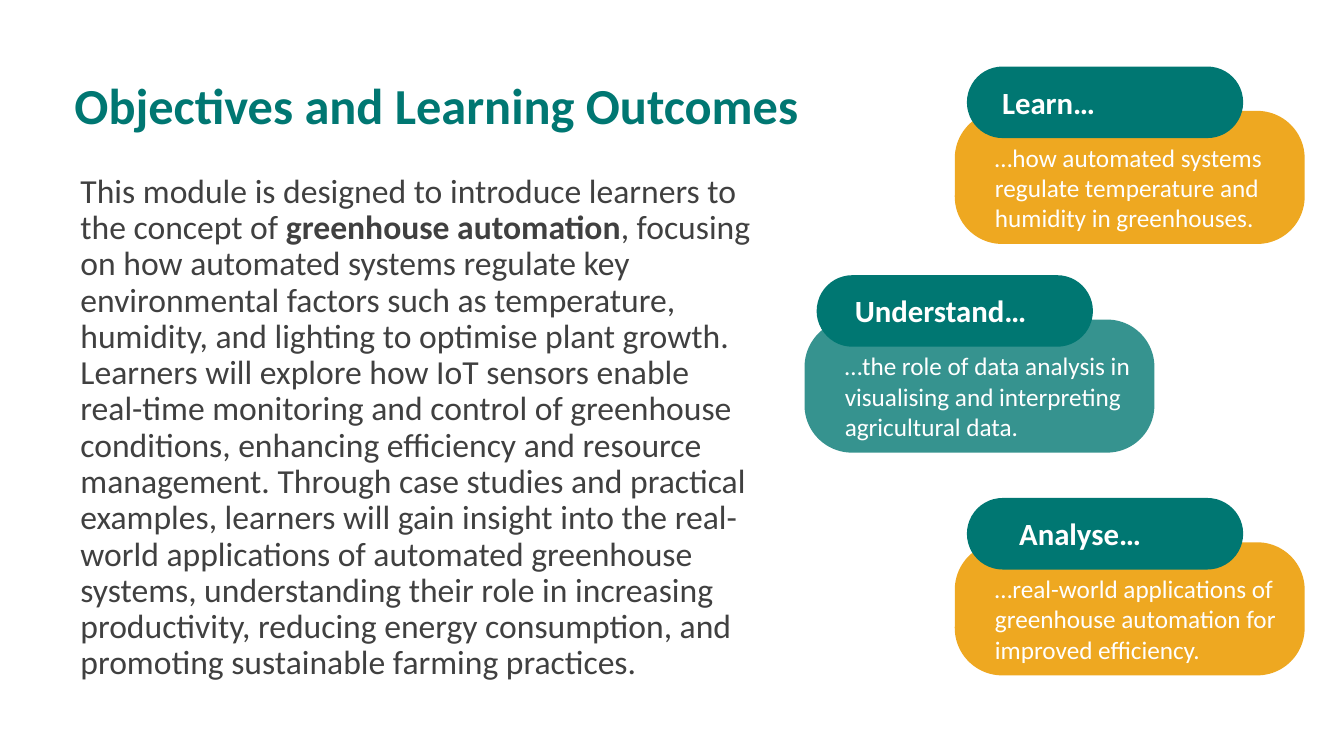
from dataclasses import dataclass

from lxml import etree
from pptx import Presentation
from pptx import util as u
from pptx.dml.color import RGBColor
from pptx.enum import shapes, text
from pptx.oxml.ns import qn

PX = 9144  # EMU per px, 100 px to the inch


@dataclass(frozen=True)
class Theme:
    font: str = "Calibri"
    teal: str = "007772"
    amber: str = "EEA821"
    white: str = "FFFFFF"
    ink: str = "404040"
    title: int = 36
    intro: int = 24
    label: int = 22
    detail: int = 18


class Deck:
    CARD_W, CARD_H, CARD_RADIUS = 347, 132, 47
    TAB_W, TAB_H = 274, 71
    TAB_DX, TAB_DY = 12, -44

    def __init__(self, theme):
        self.theme = theme
        self.prs = Presentation()
        self.prs.slide_width = 1333 * PX
        self.prs.slide_height = 750 * PX
        self.slide = self.prs.slides.add_slide(self.prs.slide_layouts[6])

    def pill(self, left, top, width, height, radius, color, alpha=100):
        """Rounded rectangle; radius in px, alpha in percent."""
        pill = self.slide.shapes.add_shape(
            shapes.MSO_SHAPE.ROUNDED_RECTANGLE,
            left * PX, top * PX, width * PX, height * PX)
        pill.adjustments[0] = radius / min(width, height)
        pill.shadow.inherit = False
        pill.line.fill.background()
        pill.fill.solid()
        pill.fill.fore_color.rgb = RGBColor.from_string(color)
        if alpha < 100:
            fill_color = pill.fill._xPr.find(".//" + qn("a:srgbClr"))
            etree.SubElement(fill_color, qn("a:alpha")).set("val", str(alpha * 1000))

    def words(self, left, top, width, height, runs, size, color, spacing=1.0):
        """One paragraph of (wording, bold) runs."""
        box = self.slide.shapes.add_textbox(left * PX, top * PX, width * PX, height * PX)
        frame = box.text_frame
        frame.word_wrap = True
        frame.vertical_anchor = text.MSO_ANCHOR.TOP
        paragraph = frame.paragraphs[0]
        paragraph.line_spacing = spacing
        for wording, bold in runs:
            run = paragraph.add_run()
            run.text = wording
            run.font.name = self.theme.font
            run.font.size = u.Pt(size)
            run.font.bold = bold
            run.font.color.rgb = RGBColor.from_string(color)

    def outcome(self, left, top, color, alpha, label, label_dx, detail, detail_width):
        """Card with a tab overlapping its top edge."""
        t = self.theme
        tab_left, tab_top = left + self.TAB_DX, top + self.TAB_DY
        self.pill(left, top, self.CARD_W, self.CARD_H, self.CARD_RADIUS, color, alpha)
        self.pill(tab_left, tab_top, self.TAB_W, self.TAB_H, self.TAB_H / 2, t.teal)
        self.words(tab_left + label_dx, tab_top + 12, 222, 47,
                   [(label, True)], t.label, t.white)
        self.words(left + 30, top + 26, detail_width, 101,
                   [(detail, False)], t.detail, t.white)

    def save(self):
        self.prs.save("out.pptx")


def main():
    theme = Theme()
    deck = Deck(theme)

    deck.words(64, 75, 800, 71, [("Objectives and Learning Outcomes", True)],
               theme.title, theme.teal, 0.9)
    introduction = [
        ("This module is designed to introduce learners to the concept of ", False),
        ("greenhouse automation", True),
        (", focusing on how automated systems regulate key environmental factors "
         "such as temperature, humidity, and lighting to optimise plant growth. "
         "Learners will explore how IoT sensors enable real-time monitoring and "
         "control of greenhouse conditions, enhancing efficiency and resource "
         "management. Through case studies and practical examples, learners will "
         "gain insight into the real-world applications of automated greenhouse "
         "systems, understanding their role in increasing productivity, reducing "
         "energy consumption, and promoting sustainable farming practices.", False),
    ]
    deck.words(70, 168, 684, 541, introduction, theme.intro, theme.ink, 0.9)

    outcomes = [
        (947, 110, theme.amber, 100, "Learn…", 25,
         "…how automated systems regulate temperature and humidity in greenhouses.", 311),
        (798, 317, theme.teal, 79, "Understand…", 28,
         "…the role of data analysis in visualising and interpreting agricultural data.", 318),
        (947, 538, theme.amber, 100, "Analyse…", 42,
         "…real-world applications of greenhouse automation for improved efficiency.", 305),
    ]
    for outcome in outcomes:
        deck.outcome(*outcome)

    deck.save()


if __name__ == "__main__":
    main()
